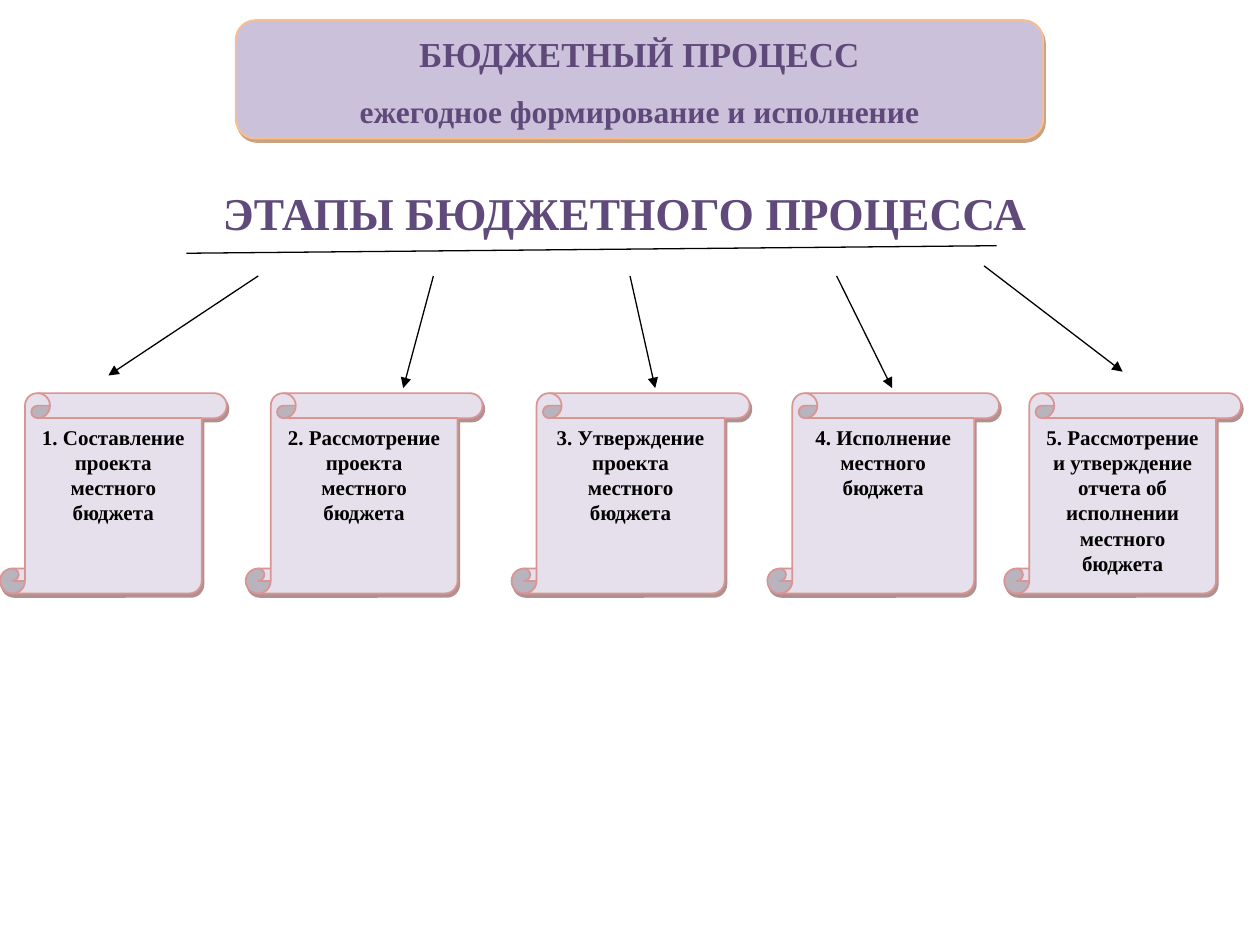
from typing import NamedTuple

from lxml.etree import SubElement
from pptx import Presentation
from pptx.dml.color import RGBColor
from pptx.enum.shapes import MSO_CONNECTOR, MSO_SHAPE
from pptx.enum.text import MSO_ANCHOR, MSO_AUTO_SIZE, PP_ALIGN
from pptx.oxml.ns import qn
from pptx.util import Inches, Pt

FONT = "Times New Roman"
TOP, HIGH = 3.12, 1.59


class Stage(NamedTuple):
    left: float
    width: float
    text: str
    start: tuple[float, float]
    end: tuple[float, float]


STAGES = [
    Stage(0, 1.8, "1. Составление проекта местного бюджета", (2.05, 2.19), (0.86, 2.98)),
    Stage(1.95, 1.88, "2. Рассмотрение проекта местного бюджета", (3.44, 2.19), (3.2, 3.08)),
    Stage(4.06, 1.89, "3. Утверждение проекта местного бюджета", (5, 2.19), (5.2, 3.08)),
    Stage(6.09, 1.84, "4. Исполнение местного бюджета", (6.64, 2.19), (7.08, 3.08)),
    Stage(7.97, 1.88, "5. Рассмотрение и утверждение отчета об исполнении местного бюджета",
          (7.81, 2.11), (8.91, 2.95)),
]


def color(code: str) -> RGBColor:
    return RGBColor.from_string(code)


def write(para, text: str, *, size: float, ink: str = "000000", after: float = 0) -> None:
    para.alignment = PP_ALIGN.CENTER
    para.space_after = Pt(after)
    run = para.add_run()
    run.text = text
    run.font.name = FONT
    run.font.size = Pt(size)
    run.font.bold = True
    run.font.color.rgb = color(ink)


def add_shadow(shape, code: str) -> None:
    """Replace the theme shadow with a half-transparent offset one."""
    shape.shadow.inherit = False
    effects = shape._element.spPr.find(qn("a:effectLst"))
    outer = SubElement(effects, qn("a:outerShdw"), dist=str(Pt(2.2)),
                       dir=str(63 * 60000), algn="ctr", rotWithShape="0")
    tint = SubElement(outer, qn("a:srgbClr"), val=code)
    SubElement(tint, qn("a:alpha"), val="50000")


def add_panel(slide, kind, box: tuple, fill: str, edge: str, shade: str):
    """Draw a filled shape and return its text frame."""
    shape = slide.shapes.add_shape(kind, *map(Inches, box))
    shape.fill.solid()
    shape.fill.fore_color.rgb = color(fill)
    shape.line.color.rgb = color(edge)
    shape.line.width = Pt(1)
    add_shadow(shape, shade)
    frame = shape.text_frame
    frame.word_wrap = True
    frame.vertical_anchor = MSO_ANCHOR.TOP
    return frame


def add_line(slide, start: tuple, end: tuple, arrow: bool = False) -> None:
    line = slide.shapes.add_connector(MSO_CONNECTOR.STRAIGHT, *map(Inches, start + end))
    line.line.color.rgb = color("000000")
    line.line.width = Pt(0.75)
    if arrow:
        SubElement(line.line._get_or_add_ln(), qn("a:tailEnd"), type="triangle")
    SubElement(line._element.spPr, qn("a:effectLst"))


def set_title(slide) -> None:
    title = slide.shapes.title
    title.left, title.top, title.width, title.height = map(Inches, (0.39, 1.41, 9.14, 0.84))
    frame = title.text_frame
    frame.word_wrap = True
    frame.auto_size = MSO_AUTO_SIZE.NONE
    frame.vertical_anchor = MSO_ANCHOR.MIDDLE
    frame.margin_bottom = Inches(0.34)
    write(frame.paragraphs[0], "ЭТАПЫ БЮДЖЕТНОГО ПРОЦЕССА", size=26, ink="604A7B")


def main() -> None:
    deck = Presentation()
    deck.slide_width, deck.slide_height = Inches(10), Inches(7.5)
    slide = deck.slides.add_slide(deck.slide_layouts[5])
    set_title(slide)

    head = add_panel(slide, MSO_SHAPE.ROUNDED_RECTANGLE, (1.87, 0.16, 6.41, 0.94),
                     "CCC1DA", "FABF8F", "974706")
    write(head.paragraphs[0], "БЮДЖЕТНЫЙ ПРОЦЕСС", size=20, ink="5F497A", after=10)
    write(head.add_paragraph(), "ежегодное формирование и исполнение",
          size=18, ink="5F497A", after=10)

    for stage in STAGES:
        frame = add_panel(slide, MSO_SHAPE.VERTICAL_SCROLL,
                          (stage.left, TOP, stage.width, HIGH),
                          "E6E0EC", "D99594", "622423")
        write(frame.paragraphs[0], stage.text, size=12)
        add_line(slide, stage.start, stage.end, arrow=True)

    add_line(slide, (1.48, 2.01), (7.91, 1.95))
    deck.save("out.pptx")


if __name__ == "__main__":
    main()
